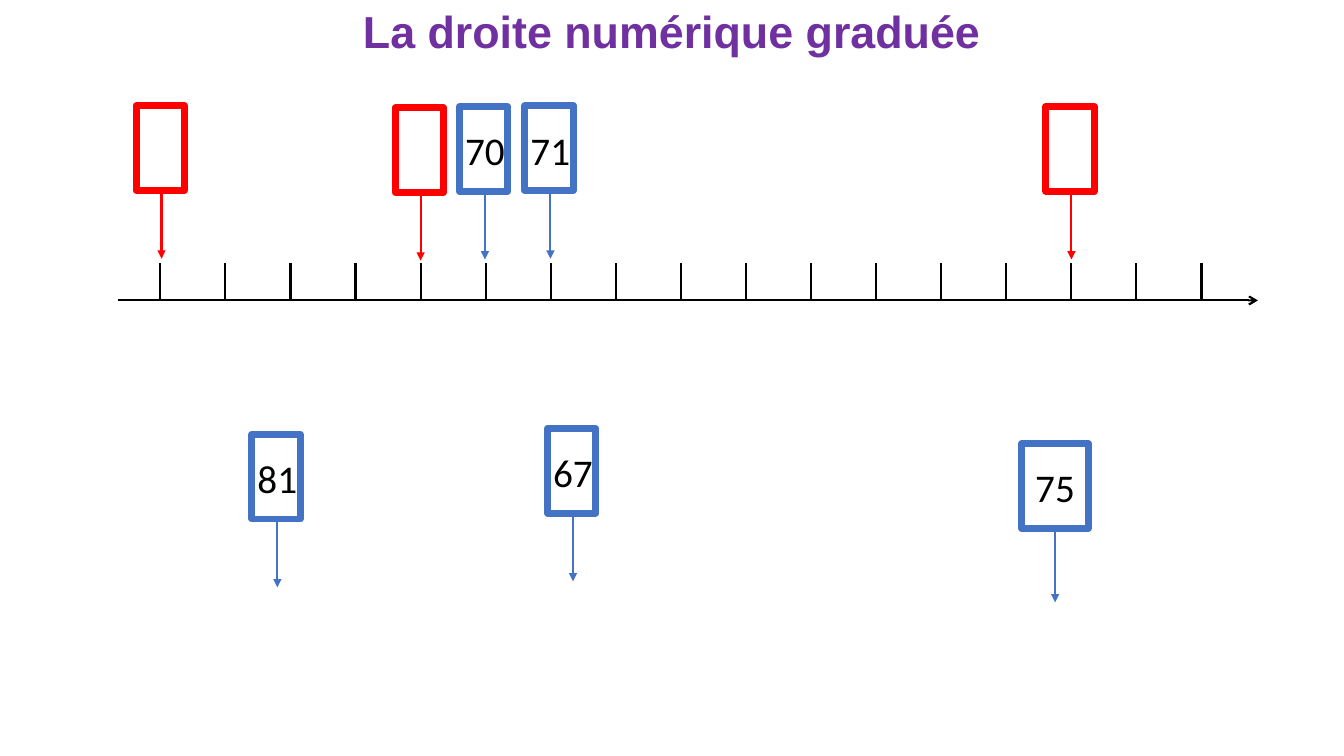
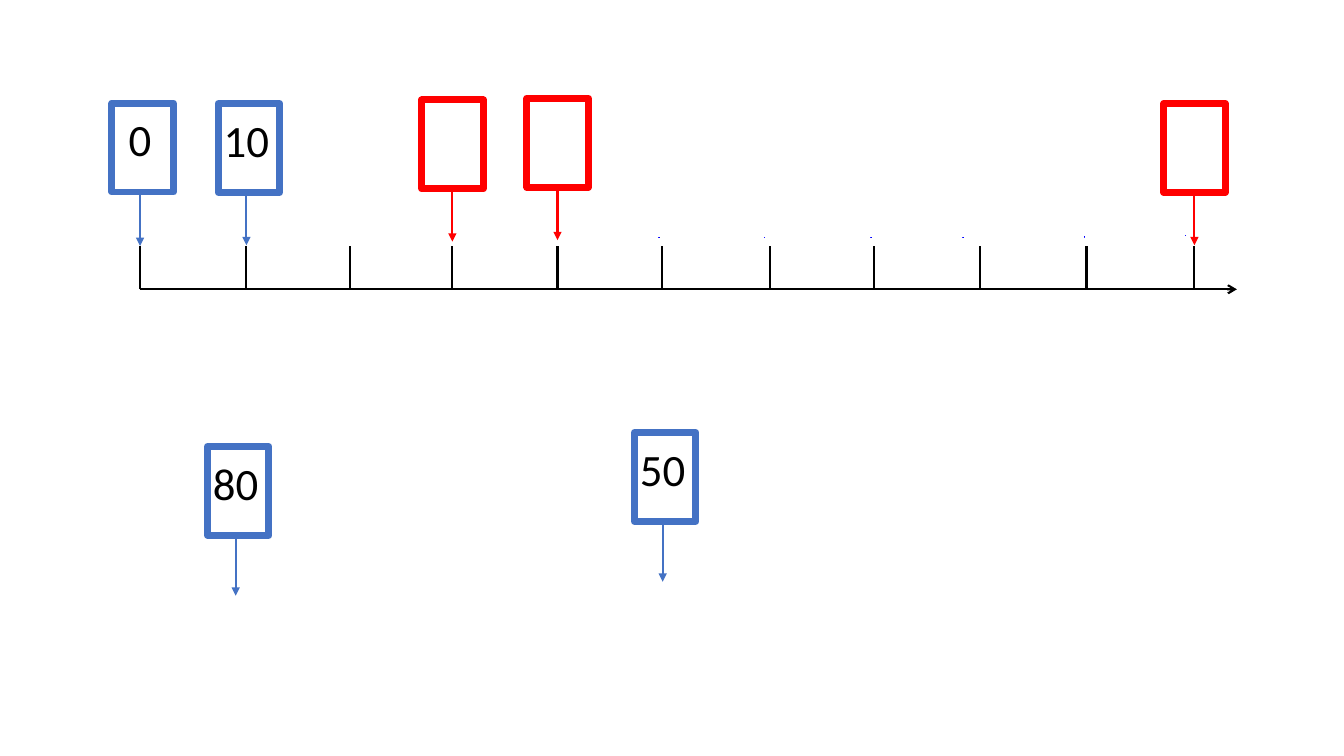
from lxml.etree import SubElement
from pptx import Presentation
from pptx.enum.shapes import MSO_CONNECTOR as Connector, MSO_SHAPE as Shape
from pptx.enum.text import MSO_ANCHOR as Anchor, PP_ALIGN as Align
from pptx.dml.color import RGBColor
from pptx.oxml.ns import qn
from pptx.util import Cm, Pt

BLACK = "000000"
BLUE = "4472C4"
RED = "FF0000"
PURPLE = "7030A0"
INK = "0000FF"


def paint(fill, colour):
    fill.solid()
    fill.fore_color.rgb = RGBColor.from_string(colour)


def draw_line(shapes, x1, y1, x2, y2, colour, head=None):
    line = shapes.add_connector(Connector.STRAIGHT, Cm(x1), Cm(y1), Cm(x2), Cm(y2))
    line.line.width = Pt(1.5)
    paint(line.line.fill, colour)
    if head:
        SubElement(line.line._get_or_add_ln(), qn("a:tailEnd"), type=head)
    SubElement(line._element.spPr, qn("a:effectLst"))


deck = Presentation()
deck.slide_width = Cm(33.87)
deck.slide_height = Cm(19.05)
units_page = deck.slides.add_slide(deck.slide_layouts[5])
tens_page = deck.slides.add_slide(deck.slide_layouts[6])

title = units_page.shapes.title
title.left, title.top, title.width, title.height = Cm(0), Cm(0), Cm(33.87), Cm(1.7)
title.text_frame.vertical_anchor = Anchor.MIDDLE
para = title.text_frame.paragraphs[0]
para.alignment = Align.CENTER
para.line_spacing = 0.9
span = para.add_run()
span.text = "La droite numérique graduée"
span.font.name = "Arial"
span.font.size = Pt(32)
span.font.bold = True
paint(span.font.fill, PURPLE)

units_ticks = [4.04 + 1.64 * step for step in range(17)]
tens_ticks = [3.53, 6.2, 8.81, 11.4, 14.05, 16.69, 19.41, 22.02, 24.69, 27.38, 30.1]
axes = [
    (units_page, 2.97, 31.7, 6.62, 7.57, units_ticks),
    (tens_page, 3.53, 31.17, 6.2, 7.29, tens_ticks),
]
for page, start, end, tick_top, axis_y, ticks in axes:
    axis = page.shapes.add_group_shape()
    draw_line(axis.shapes, start, axis_y, end, axis_y, BLACK, "arrow")
    for x in ticks:
        draw_line(axis.shapes, x, axis_y, x, tick_top, BLACK)

# page, box height, arrow start, text top, text height, text size, cards
card_sets = [
    (units_page, 2.13, 0.38, 1.45, 28, [
        ("70", BLUE, 12.22, 0.64, 2.69, 1.22, 2.08, 1.77),
        ("71", BLUE, 13.87, 0.64, 2.67, 1.22, 2.08, 1.77),
        ("", RED, 10.6, 0.64, 2.72, 1.22, 2.08, 1.77),
        ("", RED, 4.07, 0.64, 2.67, 1.22, 2.08, 1.77),
        ("", RED, 27, 0.64, 2.69, 1.22, 2.08, 1.77),
        ("67", BLUE, 14.44, 0.64, 10.8, 1.22, 2.08, 1.77),
        ("81", BLUE, 6.99, 0.64, 10.95, 1.22, 2.08, 1.77),
        ("75", BLUE, 26.59, 0.84, 11.18, 1.68, 2.23, 1.77),
    ]),
    (tens_page, 2.24, 0.1, 1.63, 32, [
        ("0", BLUE, 3.53, 0.71, 2.6, 1.55, 2.24, 1.36),
        ("10", BLUE, 6.21, 0.71, 2.61, 1.55, 2.24, 1.33),
        ("", RED, 11.4, 0.77, 2.52, 1.55, 2.24, 1.33),
        ("", RED, 14.05, 0.77, 2.48, 1.55, 2.24, 1.33),
        ("", RED, 30.1, 0.77, 2.61, 1.55, 2.24, 1.33),
        ("50", BLUE, 16.7, 0.71, 10.9, 1.55, 2.24, 1.52),
        ("80", BLUE, 5.94, 0.71, 11.25, 1.55, 2.24, 1.52),
    ]),
]
for page, height, text_drop, text_height, size, cards in card_sets:
    for value, colour, x, inset, top, width, arrow_drop, arrow_length in cards:
        card = page.shapes.add_group_shape()
        box = card.shapes.add_shape(Shape.RECTANGLE, Cm(x - inset), Cm(top), Cm(width), Cm(height))
        box.shadow.inherit = False
        box.fill.background()
        box.line.width = Pt(5)
        paint(box.line.fill, colour)
        arrow_top = top + arrow_drop
        draw_line(card.shapes, x, arrow_top, x, arrow_top + arrow_length, colour, "triangle")
        if value:
            label = card.shapes.add_textbox(Cm(x - 1.12), Cm(top + text_drop), Cm(2.24), Cm(text_height))
            label.text_frame.word_wrap = True
            para = label.text_frame.paragraphs[0]
            para.alignment = Align.CENTER
            span = para.add_run()
            span.text = value
            span.font.name = "Calibri"
            span.font.size = Pt(size)
            paint(span.font.fill, BLACK)

ink_dots = [(29.87, 5.93), (27.33, 5.96), (24.27, 5.98), (21.95, 5.97), (19.26, 5.98), (16.6, 5.97)]
for x, y in ink_dots:
    builder = tens_page.shapes.build_freeform(Cm(x + 0.01), Cm(y + 0.01))
    builder.add_line_segments([(Cm(x), Cm(y + 0.01)), (Cm(x), Cm(y))], close=False)
    dot = builder.convert_to_shape()
    dot.shadow.inherit = False
    dot.fill.background()
    dot.line.width = Pt(1)
    paint(dot.line.fill, INK)

deck.save("out.pptx")
